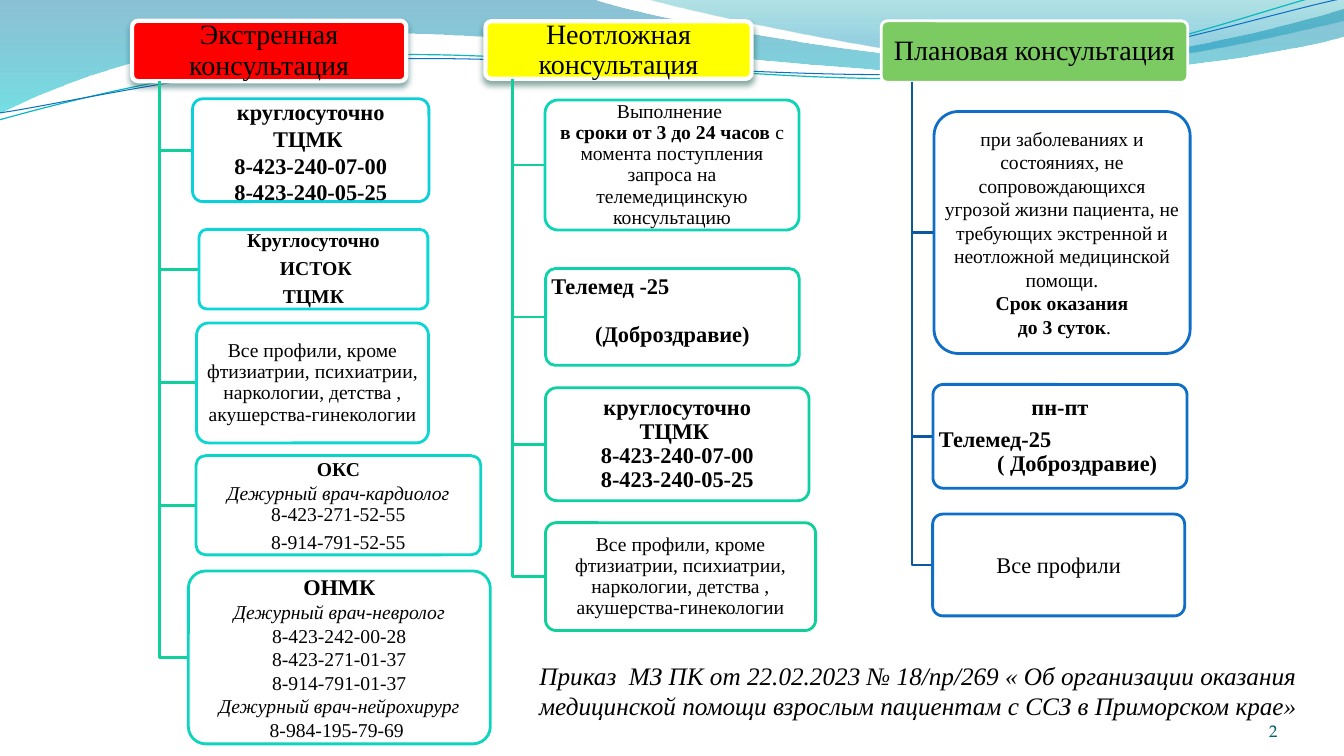
from lxml.etree import SubElement
from pptx import Presentation
from pptx.dml.color import RGBColor
from pptx.enum.shapes import MSO_SHAPE
from pptx.enum.text import MSO_ANCHOR, PP_ALIGN
from pptx.oxml.ns import qn
from pptx.util import Inches, Pt

BLACK = RGBColor(0, 0, 0)
WHITE = RGBColor(255, 255, 255)
RED = RGBColor(255, 0, 0)
YELLOW = RGBColor(255, 255, 0)
GREEN = RGBColor(0x7C, 0xCA, 0x62)
BLUE = RGBColor(0x0F, 0x6F, 0xC6)
NAVY = RGBColor(0x0C, 0x59, 0x9F)
MINT = RGBColor(0x10, 0xCF, 0x9B)
AQUA = RGBColor(0x0A, 0xB8, 0xBF)
PAGE = RGBColor(0x04, 0x5D, 0x75)
DEEP = RGBColor(0x00, 0x74, 0xA1)
CYAN = RGBColor(0x00, 0xC6, 0xCF)
TEAL = RGBColor(0x00, 0xA1, 0xA9)
SEA = RGBColor(0x00, 0x8B, 0xBF)
DARK = RGBColor(0x02, 0x4B, 0x4E)
MOSS = RGBColor(0x04, 0x4A, 0x37)
TINTS = [RGBColor.from_string(code) for code in (
    "0BD0D9", "0CD7D8", "0CD6CF", "0DD5C6", "0ED4BD",
    "0ED3B4", "0FD1AC", "0FD0A3", "10CF9B")]
LEFT, MID, RIGHT = PP_ALIGN.LEFT, PP_ALIGN.CENTER, PP_ALIGN.RIGHT


def write(frame, text, size=14, bold=False, ital=False, align=MID, lead=1.0,
          gap=0, rise=0, indent=0, font="Times New Roman", color=BLACK):
    """Add one paragraph per line of text; a bar switches bold on or off."""
    for row in text.split("\n"):
        first = frame.paragraphs[0]
        para = frame.add_paragraph() if first.runs else first
        para.alignment, para.line_spacing = align, lead
        para.space_after, para.space_before = Pt(gap * size), Pt(rise)
        if indent:
            para._p.get_or_add_pPr().set("marL", str(Inches(indent)))
        for turn, part in enumerate(row.split("|")):
            if part:
                run = para.add_run()
                run.text = part
                run.font.name, run.font.size = font, Pt(size)
                run.font.bold, run.font.italic = bold ^ (turn % 2 == 1), ital
                run.font.color.rgb = color


def fade(shape, *shares):
    """Set the opacity of the fill colours in order."""
    for color, share in zip(shape.element.spPr.iter(qn("a:srgbClr")), shares):
        SubElement(color, qn("a:alpha"), val=str(share * 1000))


def bend(shape, plan):
    """Join triples of segments into curves where the plan has a C."""
    parts = iter(list(shape.element.iter(qn("a:lnTo"))))
    for kind in plan:
        part = next(parts)
        if kind == "C":
            part.tag = qn("a:cubicBezTo")
            for other in (next(parts), next(parts)):
                part.extend(list(other))
                other.getparent().remove(other)


class Board:
    """Draw elements on a slide whose grid cells are a tenth of an inch."""

    cell = Inches(0.1)

    def __init__(self, deck):
        """Add a blank slide to the deck."""
        self.slide = deck.slides.add_slide(deck.slide_layouts[6])
        self.shapes = self.slide.shapes

    def span(self, cells):
        """Turn grid cells into lengths."""
        return [round(n * self.cell) for n in cells]

    def trace(self, points, plan="", close=False):
        """Draw a bare outline through grid points."""
        start, *rest = [self.span(p) for p in points]
        pen = self.shapes.build_freeform(*start, scale=1.0)
        pen.add_line_segments(rest, close=close)
        shape = pen.convert_to_shape()
        bend(shape, plan)
        shape.shadow.inherit = False
        shape.fill.background()
        return shape

    def wave(self, points, plan, *stops):
        """Draw a closed wave with a see-through gradient."""
        shape = self.trace(points, plan, True)
        shape.line.fill.background()
        shape.fill.gradient()
        shape.fill.gradient_angle = 270
        for mark, (color, spot, _) in zip(shape.fill.gradient_stops, stops):
            mark.color.rgb, mark.position = color, spot
        fade(shape, *[share for _, _, share in stops])

    def stroke(self, points, color, width, plan=""):
        """Draw an open line."""
        line = self.trace(points, plan).line
        line.color.rgb, line.width = color, Pt(width)

    def panel(self, place, fill, edge, lines, width=2, pads=(.03, .02, .03, .02)):
        """Draw a rounded box with its text."""
        shape = self.shapes.add_shape(MSO_SHAPE.ROUNDED_RECTANGLE, *self.span(place))
        shape.adjustments[0] = 0.1
        shape.shadow.inherit = False
        shape.fill.solid()
        shape.fill.fore_color.rgb = fill
        shape.line.color.rgb, shape.line.width = edge, Pt(width)
        self.fit(shape.text_frame, lines, pads, MSO_ANCHOR.MIDDLE)
        return shape

    def glow(self, shape, color):
        """Drop a soft shadow below a shape."""
        drop = SubElement(shape.element.spPr.find(qn("a:effectLst")), qn("a:outerShdw"),
                          blurRad=str(Pt(4.5)), dist=str(Pt(3)), dir="5400000", rotWithShape="0")
        tone = SubElement(drop, qn("a:srgbClr"), val=str(color))
        SubElement(tone, qn("a:alpha"), val="48000")

    def label(self, place, lines):
        """Add free text that stands on the bottom of its box."""
        frame = self.shapes.add_textbox(*self.span(place)).text_frame
        self.fit(frame, lines, (0, 0, 0, 0), MSO_ANCHOR.BOTTOM)

    def fit(self, frame, lines, pads, anchor):
        """Set insets and anchor, then write the lines."""
        frame.word_wrap, frame.vertical_anchor = True, anchor
        (frame.margin_left, frame.margin_top,
         frame.margin_right, frame.margin_bottom) = [Inches(p) for p in pads]
        for text, form in lines:
            write(frame, text, **form)

    def branch(self, head, trunk, color, boxes):
        """Hang boxes under a head on a common trunk."""
        foot = head[1] + head[3]
        for place, edge, lines, *pads in boxes:
            x, y, _, high = place
            middle = y + high / 2
            self.stroke([(trunk, foot), (trunk, middle), (x, middle)], color, 2)
            fade(self.panel(place, WHITE, edge, lines, 2, *pads), 90)


TIGHT = dict(lead=0.9, gap=0.35)
BOLD = dict(size=16, bold=True)
CLOSE = dict(BOLD, lead=0.9)
PHONES = "круглосуточно\nТЦМК \n8-423-240-07-00\n8-423-240-05-25"
FIELDS = [("Все профили, кроме фтизиатрии, психиатрии, наркологии, детства , "
           "акушерства-гинекологии", TIGHT)]

URGENT = [
    ((19.1, 9.8, 23.45, 10.2), TINTS[0], [(PHONES, BOLD)], (.03, .05, .03, .02)),
    ((19.74, 22.76, 22.7, 7.9), TINTS[1],
     [("Круглосуточно\n ИСТОК\nТЦМК", dict(TIGHT, bold=True))]),
    ((19.5, 32.04, 23, 11.9), TINTS[2], FIELDS),
    ((19.44, 45.2, 28.25, 9.85), TINTS[3],
     [("ОКС", dict(bold=True)), ("Дежурный врач-кардиолог", dict(ital=True)),
      ("8-423-271-52-55\n8-914-791-52-55", TIGHT)]),
    ((18.68, 56.65, 29.95, 17.15), TINTS[4],
     [("ОНМК", BOLD), ("Дежурный врач-невролог", dict(ital=True)),
      ("8-423-242-00-28\n8-423-271-01-37\n8-914-791-01-37", {}),
      ("Дежурный врач-нейрохирург", dict(ital=True)), ("8-984-195-79-69 ", {})]),
]
PROMPT = [
    ((54.05, 9.92, 25.2, 12.9), TINTS[5],
     [("Выполнение \n|в сроки от 3 до 24 часов |с момента поступления запроса на "
       "телемедицинскую консультацию", dict(lead=0.9))]),
    ((54.12, 26.65, 25.15, 9.6), TINTS[6],
     [("Телемед -25", dict(CLOSE, align=LEFT)),
      ("(Доброздравие)", dict(CLOSE, rise=17.5))], (.03, .02, .03, .13)),
    ((54.1, 38.47, 26.15, 11.2), TINTS[7], [(PHONES, CLOSE)]),
    ((54.1, 51.86, 26.8, 10.7), TINTS[8], FIELDS),
]
PLANNED = [
    ((92.64, 11.07, 25.4, 24), BLUE,
     [("при заболеваниях и состояниях, не сопровождающихся угрозой жизни пациента, "
       "не требующих экстренной и неотложной медицинской помощи.\n"
       "|Срок оказания\n| до 3 суток|.", {})]),
    ((92.53, 38.14, 25.2, 10.3), BLUE,
     [("пн-пт", dict(CLOSE, gap=0.35)), ("Телемед-25", dict(CLOSE, align=LEFT)),
      ("( Доброздравие)", dict(CLOSE, gap=0.35, indent=0.34))]),
    ((92.5, 51, 25, 10.1), BLUE, [("Все профили", dict(size=16))]),
]
COLUMNS = [
    ("Экстренная консультация", (13.1, 2.06, 27.2, 6), RED, 3, DARK, 15.8, MINT, URGENT),
    ("Неотложная консультация", (48.15, 2.12, 26.4, 5.7), YELLOW, 3, MOSS, 50.8, MINT, PROMPT),
    ("Плановая консультация", (87.4, 2.07, 30.4, 6.1), GREEN, 2, None, 90.45, NAVY, PLANNED),
]
BROAD = [(0, 0), (58.7, -0.1), (63.4, 1.7), (88.5, 6.3), (101.1, 6.3),
         (113.8, 6.3), (127.8, 2.6), (133.3, 0.9), (133.5, 3.6), (131.1, 4.4),
         (116, 7.6), (99.4, 7.5), (82.9, 7.5), (50.9, 2.8), (34.3, 3.4),
         (17.2, 3.6), (6.1, 8.3), (-0.1, 11.3)]
CREST = [(63.9, -0.1), (67.9, 1.1), (90.9, 6.2), (102.5, 6.5),
         (114.1, 6.9), (128.2, 3.2), (133.3, 2.1), (133.3, 0)]
SWELLS = [
    ([(-0.1, 11.9), (6.4, 10.1), (21.1, 6.2), (36.9, 5.5), (52.7, 4.8),
      (79, 8.7), (95, 7.6), (111, 6.6), (125.2, 0.8), (133.1, -1)], AQUA, 0.85),
    ([(0, 11.2), (6.3, 10.3), (21.8, 6.6), (37.8, 5.9), (53.7, 5.3),
      (79.6, 8.2), (95.5, 7.2), (111.5, 6.2), (125.5, 1.4), (133.4, -0.2)], BLUE, 0.75),
]


def main():
    """Build and save the slide."""
    deck = Presentation()
    deck.slide_width, deck.slide_height = Inches(13.33), Inches(7.5)
    board = Board(deck)
    board.wave(BROAD, "LCCLCCC", (DEEP, 0, 45), (CYAN, 1, 55))
    board.wave(CREST, "CCL", (TEAL, 0, 30), (SEA, 0.8, 45))
    for points, color, width in SWELLS:
        board.stroke(points, color, width, "CCC")
    for title, head, fill, width, shade, trunk, color, boxes in COLUMNS:
        text = [(title, dict(TIGHT, size=20))]
        shape = board.panel(head, fill, WHITE, text, width, (.04, .03, .04, .03))
        if shade:
            board.glow(shape, shade)
        board.branch(head, trunk, color, boxes)
    board.label((115.6, 69.5, 11.1, 4),
                [("2", dict(size=12, align=RIGHT, font="TeX Gyre Pagella", color=PAGE))])
    board.label((50.9, 65.5, 80.3, 6),
                [("Приказ  МЗ ПК от 22.02.2023 № 18/пр/269 « Об организации оказания медицинской "
                  "помощи взрослым пациентам с ССЗ в Приморском крае»", dict(size=18, ital=True))])
    deck.save("out.pptx")


if __name__ == "__main__":
    main()
